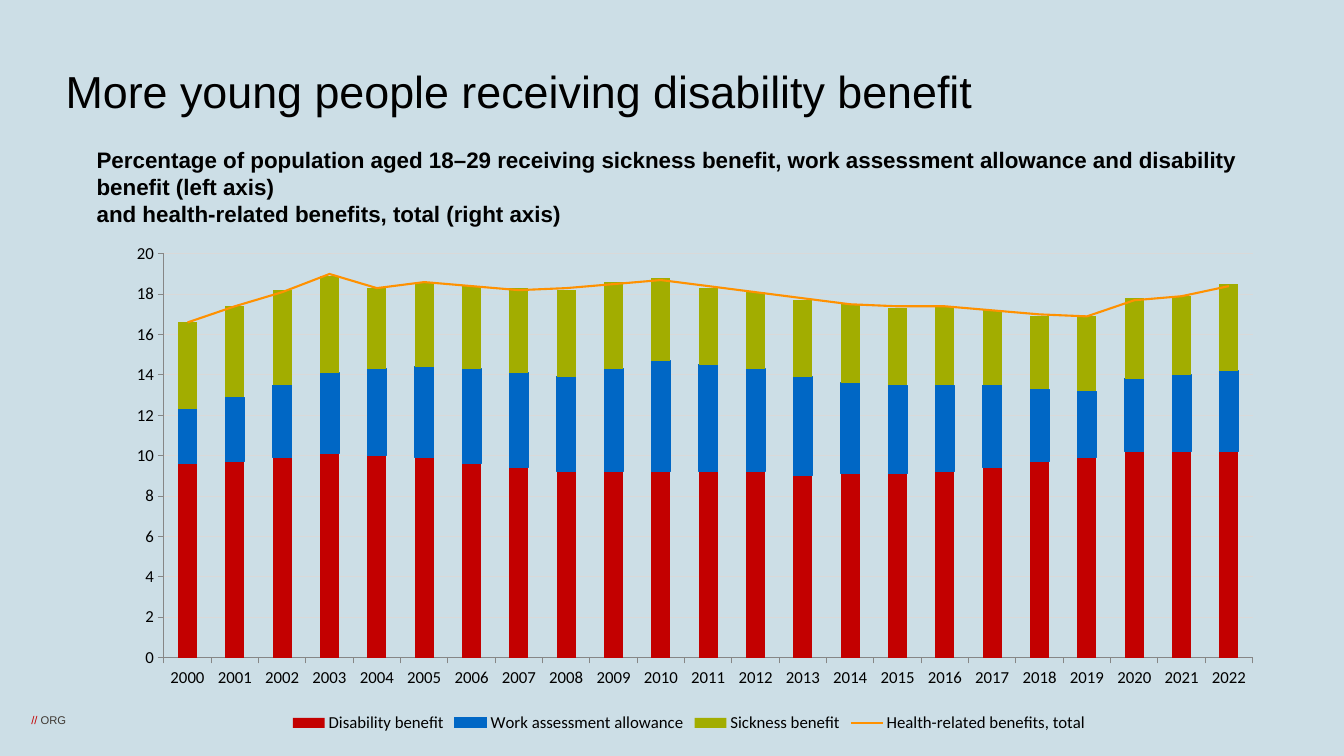
from lxml import etree
from pptx import Presentation
from pptx.chart.data import CategoryChartData
from pptx.dml.color import RGBColor
from pptx.enum.chart import XL_CHART_TYPE, XL_LEGEND_POSITION, XL_MARKER_STYLE, XL_TICK_MARK
from pptx.enum.text import MSO_ANCHOR, MSO_AUTO_SIZE, PP_ALIGN
from pptx.oxml import parse_xml
from pptx.oxml.ns import qn
from pptx.util import Inches, Pt

STACKED = XL_CHART_TYPE.COLUMN_STACKED
LEGEND_BOTTOM = XL_LEGEND_POSITION.BOTTOM
NO_MARKER = XL_MARKER_STYLE.NONE
TICK_OUT = XL_TICK_MARK.OUTSIDE
TICK_NONE = XL_TICK_MARK.NONE
BOTTOM = MSO_ANCHOR.BOTTOM
NO_FIT = MSO_AUTO_SIZE.NONE
LEFT = PP_ALIGN.LEFT

CHART_NS = "http://schemas.openxmlformats.org/drawingml/2006/chart"
BLACK, RED, GREY = "000000", "C30000", "868686"
YEARS = [str(year) for year in range(2000, 2023)]
BENEFITS = [
    ("Disability benefit", RED,
     [9.6, 9.7, 9.9, 10.1, 10, 9.9, 9.6, 9.4, 9.2, 9.2, 9.2, 9.2,
      9.2, 9, 9.1, 9.1, 9.2, 9.4, 9.7, 9.9, 10.2, 10.2, 10.2]),
    ("Work assessment allowance", "0067C5",
     [2.7, 3.2, 3.6, 4, 4.3, 4.5, 4.7, 4.7, 4.7, 5.1, 5.5, 5.3,
      5.1, 4.9, 4.5, 4.4, 4.3, 4.1, 3.6, 3.3, 3.6, 3.8, 4]),
    ("Sickness benefit", "A2AD00",
     [4.3, 4.5, 4.7, 4.8, 4, 4.2, 4.1, 4.2, 4.3, 4.3, 4.1, 3.8,
      3.8, 3.8, 3.9, 3.8, 3.9, 3.7, 3.6, 3.7, 4, 3.9, 4.3]),
    ("Health-related benefits, total", "FF9100",
     [16.6, 17.4, 18.1, 19, 18.3, 18.6, 18.4, 18.2, 18.3, 18.5, 18.7, 18.4,
      18.1, 17.8, 17.5, 17.4, 17.4, 17.2, 17, 16.9, 17.7, 17.9, 18.4]),
]


def rgb(value):
    return RGBColor.from_string(value)


def style_font(font, size, color, name="Arial", bold=False):
    font.name = name
    font.size = Pt(size)
    font.bold = bold
    font.color.rgb = rgb(color)


def style_line(line, color, width=0.75):
    line.color.rgb = rgb(color)
    line.width = Pt(width)


def add_title(s, box, text):
    title = s.shapes.title
    title.left, title.top, title.width, title.height = map(Inches, box)
    tf = title.text_frame
    tf.text = text
    tf.auto_size = NO_FIT
    tf.vertical_anchor = BOTTOM
    p = tf.paragraphs[0]
    p.alignment = LEFT
    p.line_spacing = 0.9
    style_font(p.runs[0].font, 32, BLACK)


def add_subtitle(s, box, lines):
    tf = s.shapes.add_textbox(*map(Inches, box)).text_frame
    tf.word_wrap = True
    tf.text = "\n".join(lines)
    for p in tf.paragraphs:
        style_font(p.runs[0].font, 16, BLACK, bold=True)


def add_footer(s, box, parts):
    tf = s.shapes.add_textbox(*map(Inches, box)).text_frame
    tf.margin_left = Inches(0.04)
    tf.margin_right = tf.margin_top = tf.margin_bottom = 0
    for text, color in parts:
        r = tf.paragraphs[0].add_run()
        r.text = text
        style_font(r.font, 8, color)


def move_last_series_to_line(chart):
    bar = chart.plots[0]._element
    ser = bar.findall(qn("c:ser"))[-1]
    for invert in ser.findall(qn("c:invertIfNegative")):
        ser.remove(invert)
    line = parse_xml(
        f'<c:lineChart xmlns:c="{CHART_NS}"><c:grouping val="standard"/>'
        '<c:varyColors val="0"/><c:marker val="1"/></c:lineChart>')
    line.insert(2, ser)
    for axis in bar.findall(qn("c:axId")):
        etree.SubElement(line, qn("c:axId")).set("val", axis.get("val"))
    bar.addnext(line)


def set_plot_layout(chart, x, y, w, h):
    plot_area = chart.plots[0]._element.getparent()
    for old in plot_area.findall(qn("c:layout")):
        plot_area.remove(old)
    layout = etree.Element(qn("c:layout"))
    manual = etree.SubElement(layout, qn("c:manualLayout"))
    for tag, val in [("layoutTarget", "inner"), ("xMode", "edge"), ("yMode", "edge"),
                     ("x", x), ("y", y), ("w", w), ("h", h)]:
        etree.SubElement(manual, qn("c:" + tag)).set("val", str(val))
    plot_area.insert(0, layout)


def add_benefit_chart(s, box):
    data = CategoryChartData(number_format="0.0")
    data.categories = YEARS
    for name, _, values in BENEFITS:
        data.add_series(name, values)
    chart = s.shapes.add_chart(STACKED, *map(Inches, box), data).chart
    move_last_series_to_line(chart)
    set_plot_layout(chart, 0.074, 0.036, 0.883, 0.806)
    style_font(chart.font, 12, BLACK, "Calibri")
    chart.has_title = False
    chart.has_legend = True
    chart.legend.position = LEGEND_BOTTOM
    chart.legend.include_in_layout = False

    bars, total = chart.plots
    bars.vary_by_categories = False
    bars.gap_width, bars.overlap = 150, 100
    for series, (_, color, _) in zip(bars.series, BENEFITS):
        series.format.fill.solid()
        series.format.fill.fore_color.rgb = rgb(color)
    style_line(bars.series[1].format.line, BENEFITS[1][1])
    total_line = total.series[0]
    total_line.smooth = False
    total_line.marker.style = NO_MARKER
    style_line(total_line.format.line, BENEFITS[-1][1], 1.5)

    for axis in (chart.category_axis, chart.value_axis):
        axis.major_tick_mark = TICK_OUT
        axis.minor_tick_mark = TICK_NONE
        style_line(axis.format.line, GREY)
    axis = chart.value_axis
    axis.minimum_scale, axis.maximum_scale, axis.major_unit = 0, 20, 2
    axis.tick_labels.number_format = "0"
    axis.tick_labels.number_format_is_linked = False
    style_line(axis.major_gridlines.format.line, "D9D9D9")


def main():
    prs = Presentation()
    prs.slide_width, prs.slide_height = Inches(13.33), Inches(7.5)
    s = prs.slides.add_slide(prs.slide_layouts[5])
    s.background.fill.solid()
    s.background.fill.fore_color.rgb = rgb("CCDEE6")
    add_footer(s, (0.27, 7.08, 0.39, 0.13), [("// ", RED), ("ORG", "3E3832")])
    add_title(s, (0.55, 0.26, 12.23, 0.96), "More young people receiving disability benefit")
    add_subtitle(s, (0.86, 1.4, 12.15, 0.64), [
        "Percentage of population aged 18–29 receiving sickness benefit, "
        "work assessment allowance and disability benefit (left axis)",
        "and health-related benefits, total (right axis)"])
    add_benefit_chart(s, (0.72, 2.34, 12.23, 4.97))
    prs.save("out.pptx")


if __name__ == "__main__":
    main()
